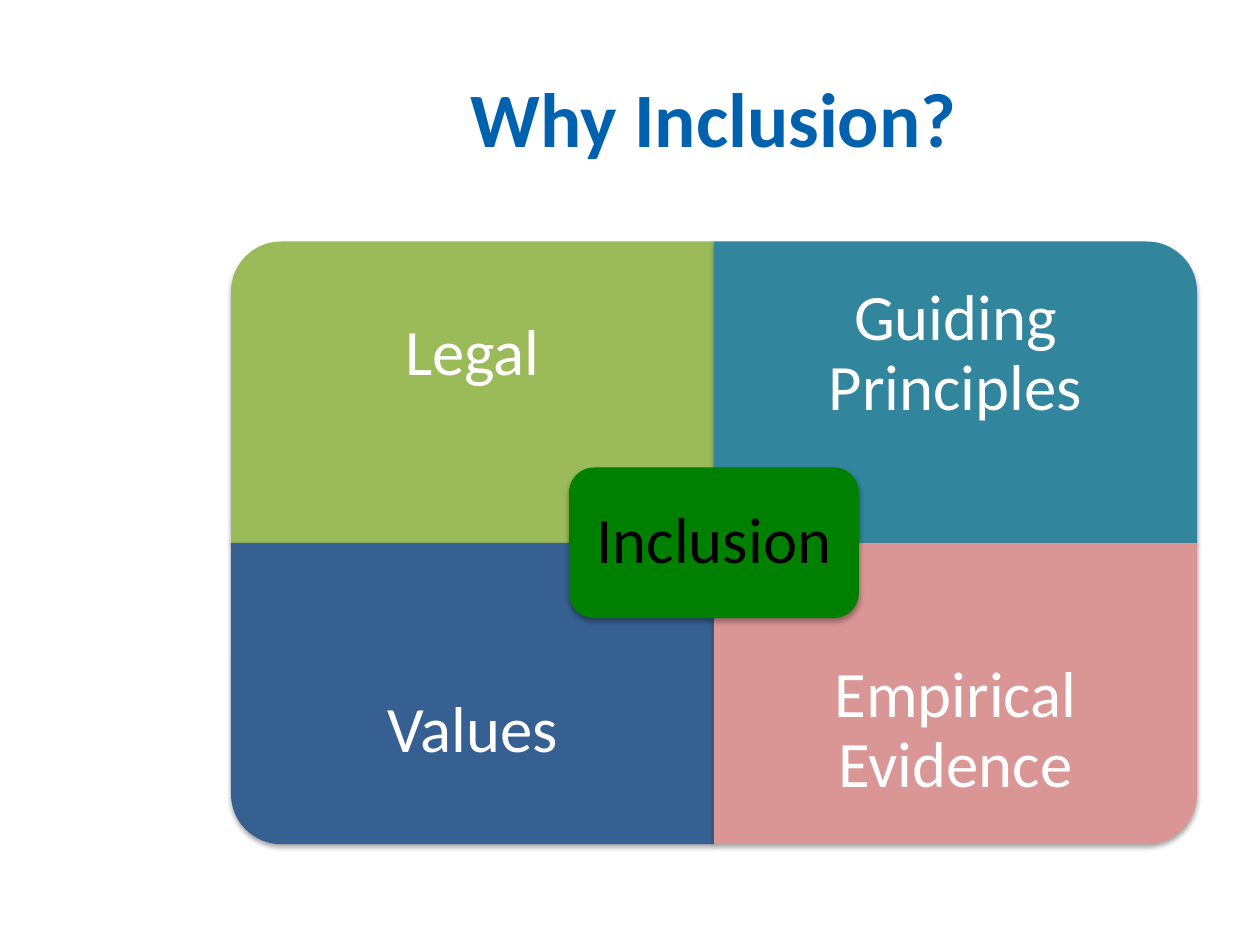
from pptx import Presentation
from pptx.dml.color import RGBColor as Rgb
from pptx.enum.shapes import MSO_SHAPE as Kind
from pptx.enum.text import MSO_ANCHOR as Anchor, PP_ALIGN as Align
from pptx.oxml import parse_xml
from pptx.util import Pt

HEX = {"blue": "0061AF", "lime": "9BBB59", "teal": "31859C", "navy": "376092",
       "pink": "D99694", "green": "008000", "white": "FFFFFF", "black": "000000"}
TITLE = "Why Inclusion?"
PARTS = [("Legal", "lime", 0, 0, 270), ("Guiding Principles", "teal", 1, 0, 0),
         ("Values", "navy", 0, 1, 180), ("Empirical Evidence", "pink", 1, 1, 90)]
CORE = "Inclusion"
LEFT, TOP, WIDE, HIGH = 132, 138, 276, 172.2
NS = "http://schemas.openxmlformats.org/drawingml/2006/main"
SHADE = (f'<a:effectLst xmlns:a="{NS}"><a:outerShdw blurRad="{Pt(3.1)}" dist="{Pt(1.8)}" '
         'dir="5400000" rotWithShape="0"><a:srgbClr val="000000">'
         '<a:alpha val="35000"/></a:srgbClr></a:outerShdw></a:effectLst>')


def write(box, text, size=37, color="white", bold=False, inset=None, line=None):
    frame = box.text_frame
    frame.word_wrap = True
    frame.vertical_anchor = Anchor.MIDDLE
    if inset is not None:
        frame.margin_left = frame.margin_right = Pt(inset)
        frame.margin_top = frame.margin_bottom = Pt(inset)
    frame.text = text
    para = frame.paragraphs[0]
    para.alignment = Align.CENTER
    para.line_spacing = line
    font = para.runs[0].font
    font.name, font.size, font.bold = "Calibri", Pt(size), bold
    font.color.rgb = Rgb.from_string(HEX[color])


def block(group, kind, mid, wide, high, color, turn=0):
    x, y = mid
    shape = group.shapes.add_shape(kind, Pt(x - wide / 2), Pt(y - high / 2), Pt(wide), Pt(high))
    shape.rotation = turn
    shape.fill.solid()
    shape.fill.fore_color.rgb = Rgb.from_string(HEX[color])
    shape.line.fill.background()
    shape._element.spPr.append(parse_xml(SHADE))


def label(group, text, x, y, wide, high, **style):
    box = group.shapes.add_textbox(Pt(x), Pt(y), Pt(wide), Pt(high))
    write(box, text, line=0.9, **style)


deck = Presentation()
deck.slide_width, deck.slide_height = Pt(720), Pt(540)
slide = deck.slides.add_slide(deck.slide_layouts[5])
title = slide.shapes.title
title.left, title.top, title.width, title.height = Pt(LEFT), Pt(21.6), Pt(2 * WIDE), Pt(90)
write(title, TITLE, size=44, color="blue", bold=True)

group = slide.shapes.add_group_shape()
for text, color, col, row, turn in PARTS:
    x, y = LEFT + col * WIDE, TOP + row * HIGH
    size = (HIGH, WIDE) if turn % 180 else (WIDE, HIGH)
    block(group, Kind.ROUND_1_RECTANGLE, (x + WIDE / 2, y + HIGH / 2), *size, color, turn)
    label(group, text, x, y + row * HIGH / 4, WIDE, HIGH * 3 / 4, inset=21)

mid = LEFT + WIDE, TOP + HIGH
wide, high, pad = WIDE * 0.6, HIGH / 2, 4.2
block(group, Kind.ROUNDED_RECTANGLE, mid, wide, high, "green")
label(group, CORE, mid[0] - wide / 2 + pad, mid[1] - high / 2 + pad,
      wide - 2 * pad, high - 2 * pad, color="black", inset=11)
deck.save("out.pptx")
